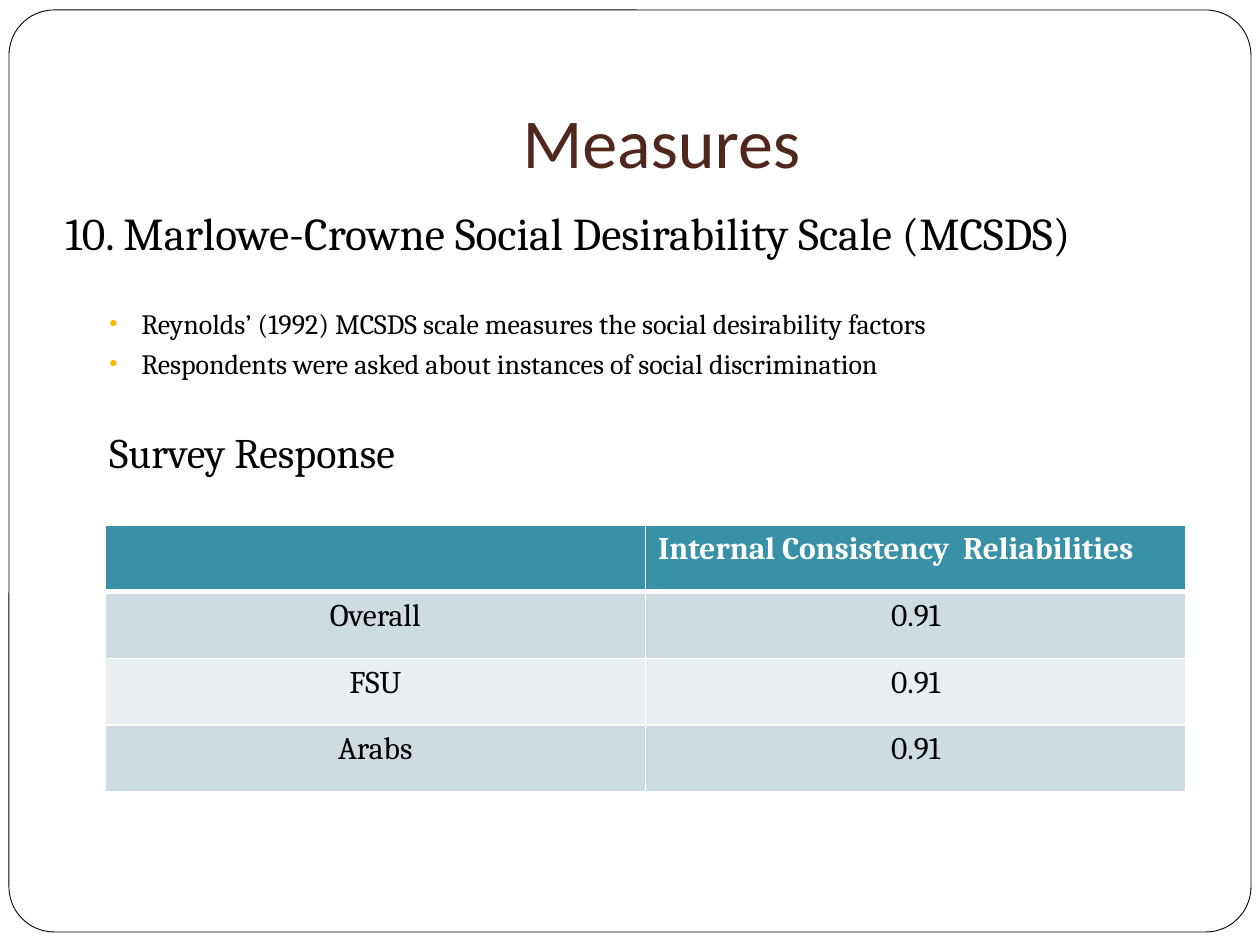
from lxml.etree import SubElement
from pptx import Presentation
from pptx.dml.color import RGBColor
from pptx.enum.shapes import MSO_SHAPE as Shape
from pptx.enum.text import MSO_ANCHOR as Anchor, PP_ALIGN as Align
from pptx.oxml.ns import qn
from pptx.util import Emu, Pt

PX = 914400 / 126
COLORS = {
    "white": "FFFFFF", "black": "000000", "title": "4F271C", "bullet": "FEB80A",
    "header": "3891A7", "band_dark": "CEDCE1", "band_light": "E8EEF1",
}
BODY = [
    ("10. Marlowe-Crowne Social Desirability Scale (MCSDS)",
     dict(size=26, margin=38, indent=-38, before=5.8)),
    ("Reynolds’ (1992) MCSDS scale measures the social desirability factors",
     dict(size=16, margin=76, indent=-32, before=26.6, bullet=True)),
    ("Respondents were asked about instances of social discrimination",
     dict(size=16, margin=76, indent=-32, before=3.7, bullet=True)),
    ("Survey Response",
     dict(size=24, margin=76, indent=-32, before=26.6)),
]
RELIABILITIES = [
    ("", "Internal Consistency  Reliabilities"),
    ("Overall", "0.91"),
    ("FSU", "0.91"),
    ("Arabs", "0.91"),
]


def px(*lengths):
    return [Emu(round(length * PX)) for length in lengths]


def rgb(name):
    return RGBColor.from_string(COLORS[name])


def write(paragraph, text, size=18, font="Cambria", color="black", bold=False,
          align=Align.LEFT, before=0, margin=0, indent=0, bullet=False):
    paragraph.alignment = align
    paragraph.space_before = Pt(before)
    properties = paragraph._p.get_or_add_pPr()
    for name, length in zip(("marL", "indent"), px(margin, indent)):
        properties.set(name, str(length))
    if bullet:
        bullet_color = SubElement(properties, qn("a:buClr"))
        SubElement(bullet_color, qn("a:srgbClr"), val=COLORS["bullet"])
        SubElement(properties, qn("a:buSzPct"), val="85000")
        SubElement(properties, qn("a:buFont"), typeface="Arial")
        SubElement(properties, qn("a:buChar"), char="•")
    if text:
        run = paragraph.add_run()
        run.text = text
        run.font.size, run.font.name, run.font.bold = Pt(size), font, bold
        run.font.color.rgb = rgb(color)


def add_frame(slide):
    shape = slide.shapes.add_shape(Shape.ROUNDED_RECTANGLE, *px(9, 10, 1242, 922))
    shape.adjustments[0] = 0.049
    shape.shadow.inherit = False
    shape.fill.solid()
    shape.fill.fore_color.rgb = rgb("white")
    shape.line.color.rgb = rgb("black")
    shape.line.width = Pt(0.5)


def add_text(slide, box, paragraphs, anchor=Anchor.TOP, bottom=6):
    frame = slide.shapes.add_textbox(*px(*box)).text_frame
    frame.word_wrap = True
    frame.vertical_anchor = anchor
    frame.margin_bottom = px(bottom)[0]
    for index, (text, style) in enumerate(paragraphs):
        paragraph = frame.add_paragraph() if index else frame.paragraphs[0]
        write(paragraph, text, **style)


def set_borders(cell, **widths):
    properties = cell._tc.get_or_add_tcPr()
    for side in "LRTB":
        line = SubElement(properties, qn(f"a:ln{side}"), w=str(Pt(widths.get(side, 1))))
        fill = SubElement(line, qn("a:solidFill"))
        SubElement(fill, qn("a:srgbClr"), val=COLORS["white"])


def add_reliability_table(slide):
    table = slide.shapes.add_table(4, 2, *px(105, 525, 1081, 267)).table
    for row_index, texts in enumerate(RELIABILITIES):
        if row_index == 0:
            fill, borders = "header", {"B": 3}
            style = dict(color="white", bold=True)
        else:
            fill = "band_dark" if row_index % 2 else "band_light"
            borders = {"T": 3} if row_index == 1 else {}
            style = dict(align=Align.CENTER)
        for column_index, text in enumerate(texts):
            cell = table.cell(row_index, column_index)
            set_borders(cell, **borders)
            cell.fill.solid()
            cell.fill.fore_color.rgb = rgb(fill)
            write(cell.text_frame.paragraphs[0], text, **style)


def main():
    presentation = Presentation()
    presentation.slide_width, presentation.slide_height = px(1260, 945)
    slide = presentation.slides.add_slide(presentation.slide_layouts[6])

    # Page frame
    add_frame(slide)
    # Title and body
    title_style = dict(size=40, font="Calibri", color="title", align=Align.CENTER)
    add_text(slide, (126, 38, 1071, 157), [("Measures", title_style)],
             anchor=Anchor.BOTTOM, bottom=13)
    add_text(slide, (53, 199, 1144, 630), BODY)
    # Reliability table
    add_reliability_table(slide)

    presentation.save("out.pptx")


if __name__ == "__main__":
    main()
